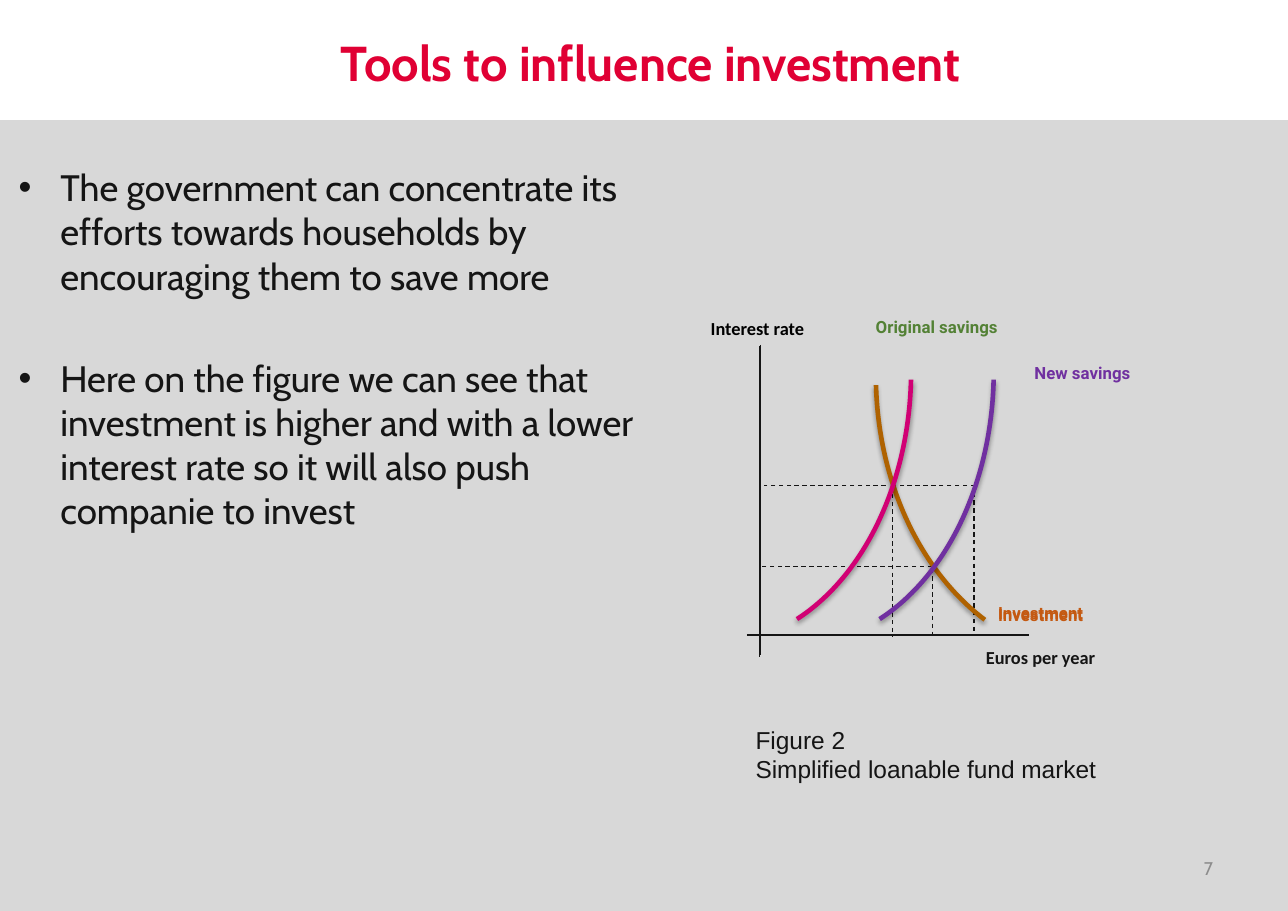
from dataclasses import dataclass

from lxml import etree
from pptx import Presentation
from pptx import util as u
from pptx.dml.color import RGBColor
from pptx.enum import dml, shapes, text
from pptx.oxml import ns


@dataclass(frozen=True)
class Theme:
    ink: str = "151515"
    black: str = "000000"
    red: str = "E00034"
    panel: str = "D8D8D8"
    grey: str = "8C8C8C"
    green: str = "538135"
    orange: str = "C45911"
    purple: str = "7030A0"
    brown: str = "AF6200"
    pink: str = "D10074"
    heading: str = "Cabin"
    axis: str = "Calibri"
    label: str = "Roboto"
    caption: str = "Arial"
    title_size: int = 32
    body_size: int = 24
    caption_size: int = 16
    axis_size: int = 12
    label_size: int = 11
    thin: float = 0.75
    thick: float = 3


class SlideBuilder:
    def __init__(self, presentation, theme):
        self.theme = theme
        self.slide = presentation.slides.add_slide(presentation.slide_layouts[5])

    def fill_text(self, shape, lines, font, size, color, bold=False,
                  align=text.PP_ALIGN.LEFT, anchor=text.MSO_ANCHOR.TOP,
                  bullet=False, gap=0):
        frame = shape.text_frame
        settings = {"word_wrap": True, "vertical_anchor": anchor,
                    "auto_size": text.MSO_AUTO_SIZE.NONE}
        for name, value in settings.items():
            setattr(frame, name, value)
        for index, line in enumerate(lines):
            paragraph = frame.paragraphs[0] if index == 0 else frame.add_paragraph()
            if bullet:
                self.add_bullet(paragraph)
            paragraph.alignment = align
            paragraph.space_before = u.Pt(gap if index else 0)
            run = paragraph.add_run()
            run.text = line
            style = {"name": font, "size": u.Pt(size), "bold": bold}
            for name, value in style.items():
                setattr(run.font, name, value)
            run.font.color.rgb = RGBColor.from_string(color)

    def add_bullet(self, paragraph):
        properties = paragraph._p.get_or_add_pPr()
        indent = u.Inches(0.38)
        properties.set("marL", str(indent))
        properties.set("indent", str(-indent))
        bullet_font = etree.SubElement(properties, ns.qn("a:buFont"))
        bullet_font.set("typeface", "Arial")
        etree.SubElement(properties, ns.qn("a:buChar")).set("char", "•")

    def title(self, box, line):
        shape = self.slide.shapes.title
        for name, value in zip(("left", "top", "width", "height"), box):
            setattr(shape, name, u.Inches(value))
        self.fill_text(shape, [line], self.theme.heading, self.theme.title_size,
                       self.theme.red, bold=True, anchor=text.MSO_ANCHOR.MIDDLE)

    def text_box(self, box, lines, font, size, color, **options):
        shape = self.slide.shapes.add_textbox(*map(u.Inches, box))
        self.fill_text(shape, lines, font, size, color, **options)

    def panel(self, box, color):
        shape = self.slide.shapes.add_shape(
            shapes.MSO_SHAPE.RECTANGLE, *map(u.Inches, box))
        shape.shadow.inherit = False
        shape.fill.solid()
        shape.fill.fore_color.rgb = RGBColor.from_string(color)
        shape.line.fill.background()

    def line(self, start, end, dashed=False):
        connector = self.slide.shapes.add_connector(
            shapes.MSO_CONNECTOR.STRAIGHT, *map(u.Inches, start + end))
        connector.line.width = u.Pt(self.theme.thin)
        connector.line.color.rgb = RGBColor.from_string(self.theme.ink)
        if dashed:
            connector.line.dash_style = dml.MSO_LINE.DASH
        etree.SubElement(connector._element.spPr, ns.qn("a:effectLst"))

    def curve(self, box, end_angle, color, flipped=False):
        shape = self.slide.shapes.add_shape(
            shapes.MSO_SHAPE.ARC, *map(u.Inches, box))
        shape.adjustments[0] = 1.57
        shape.adjustments[1] = end_angle
        shape.fill.background()
        shape.line.width = u.Pt(self.theme.thick)
        shape.line.color.rgb = RGBColor.from_string(color)
        properties = shape._element.spPr
        if flipped:
            properties.find(ns.qn("a:xfrm")).set("flipH", "1")
        # Soft shadow straight below the curve
        shape.shadow.inherit = False
        shadow = etree.SubElement(properties.find(ns.qn("a:effectLst")),
                                  ns.qn("a:outerShdw"))
        values = {"blurRad": u.Pt(3.1), "dist": u.Pt(1.8), "dir": 90 * 60000,
                  "rotWithShape": 0}
        for name, value in values.items():
            shadow.set(name, str(value))
        shade = etree.SubElement(shadow, ns.qn("a:srgbClr"))
        shade.set("val", self.theme.black)
        etree.SubElement(shade, ns.qn("a:alpha")).set("val", "35000")


def main():
    theme = Theme()
    presentation = Presentation()
    presentation.slide_width = u.Inches(11.69)
    presentation.slide_height = u.Inches(8.27)
    builder = SlideBuilder(presentation, theme)

    # Background, title and page number
    builder.panel((0, 1.09, 11.69, 7.18), theme.panel)
    builder.title((2.99, 0.2, 8.71, 0.72), "Tools to influence investment")
    builder.text_box((8.38, 7.66, 2.73, 0.44), ["7"], theme.heading,
                     theme.axis_size, theme.grey, align=text.PP_ALIGN.RIGHT,
                     anchor=text.MSO_ANCHOR.MIDDLE)

    # Argument
    builder.text_box(
        (0.07, 1.45, 6, 5.69),
        ["The government can concentrate its efforts towards households by "
         "encouraging them to save more",
         "Here on the figure we can see that investment is higher and with a "
         "lower interest rate so it will also push companie to invest"],
        theme.heading, theme.body_size, theme.ink, bullet=True, gap=38)

    # Figure caption
    builder.text_box((6.76, 6.53, 4.4, 0.64),
                     ["Figure 2", "Simplified loanable fund market"],
                     theme.caption, theme.caption_size, theme.ink)

    # Doubled axes
    for offset in (0, 0.01):
        builder.line((6.89 + offset, 3.14 - offset), (6.89 + offset, 5.96 - offset))
        builder.line((6.78, 5.76 + offset), (9.34, 5.76 + offset))

    # Guides from the crossing points to the axes
    guides = [
        ((8.46, 5.16), (8.46, 5.76)),
        ((8.46, 5.14), (6.9, 5.14)),
        ((8.04, 4.41), (6.93, 4.41)),
        ((8.1, 4.41), (8.1, 5.78)),
        ((8.85, 4.41), (8.11, 4.41)),
        ((8.84, 4.4), (8.84, 5.77)),
    ]
    for start, end in guides:
        builder.line(start, end, dashed=True)

    # Axis names
    builder.text_box((6.16, 2.83, 1.43, 0.28), ["Interest rate"], theme.axis,
                     theme.axis_size, theme.black, bold=True,
                     align=text.PP_ALIGN.CENTER)
    builder.text_box((8.85, 5.82, 2.03, 0.55), ["Euros per year"], theme.axis,
                     theme.axis_size, theme.ink, bold=True)

    # Curve names
    curve_names = [
        ((7.85, 2.83, 2.36, 0.37), "Original savings", theme.green),
        ((8.96, 5.42, 1.61, 0.27), "Investment", theme.orange),
        ((8.96, 5.44, 1.61, 0.27), "Investment", theme.orange),
        ((9.29, 3.24, 2.36, 0.37), "New savings", theme.purple),
    ]
    for box, name, color in curve_names:
        builder.text_box(box, [name], theme.label, theme.label_size, color, bold=True)

    # Investment curve and the two savings curves
    builder.curve((7.95, 0.83, 4, 5.15), 39.32, theme.brown, flipped=True)
    for left, color in ((4.7, theme.pink), (5.45, theme.purple)):
        builder.curve((left, 0.88, 3.57, 4.97), 42.98, color)

    presentation.save("out.pptx")


if __name__ == "__main__":
    main()
